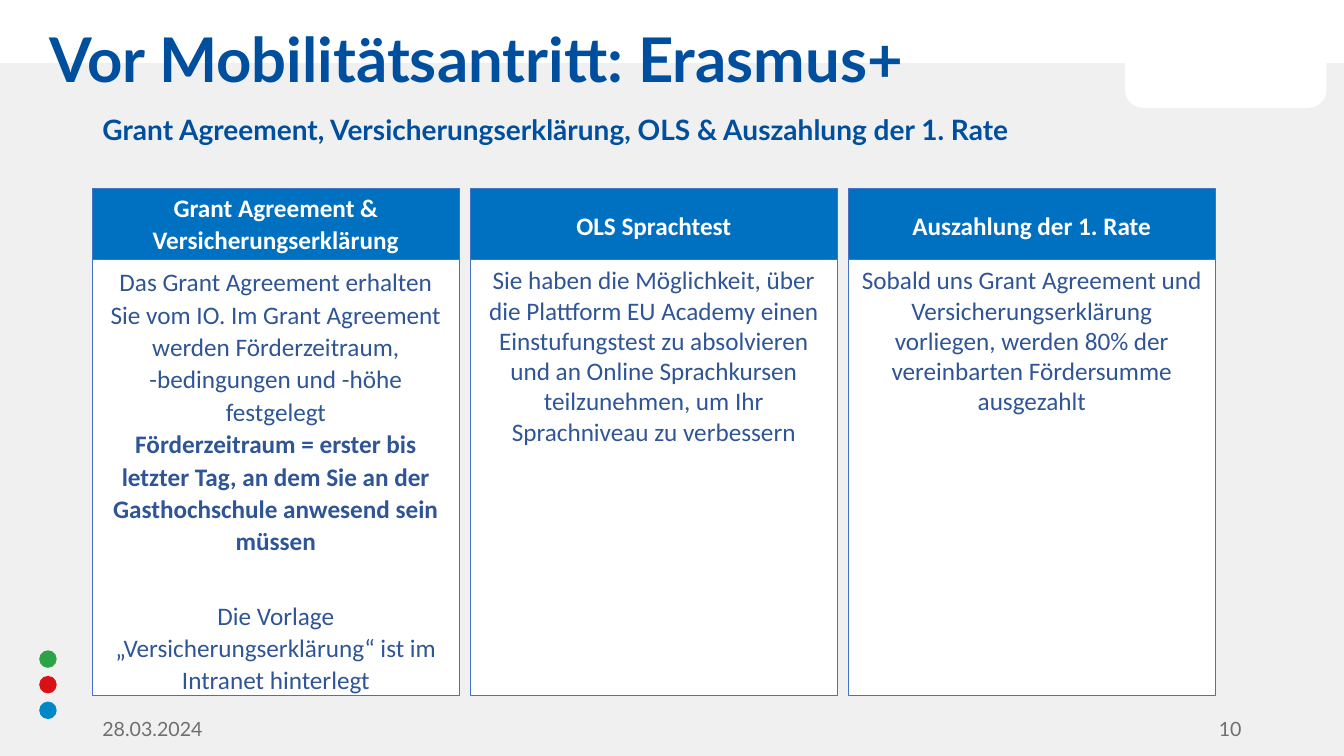
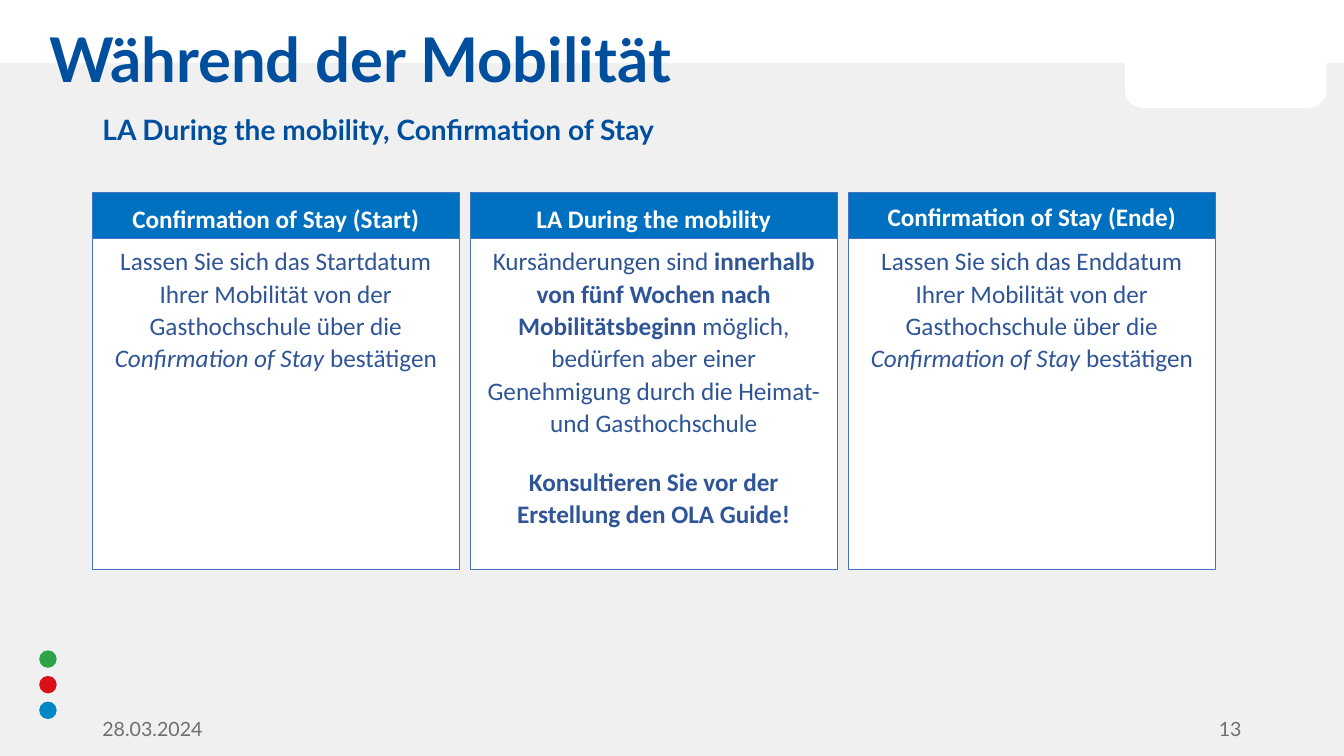
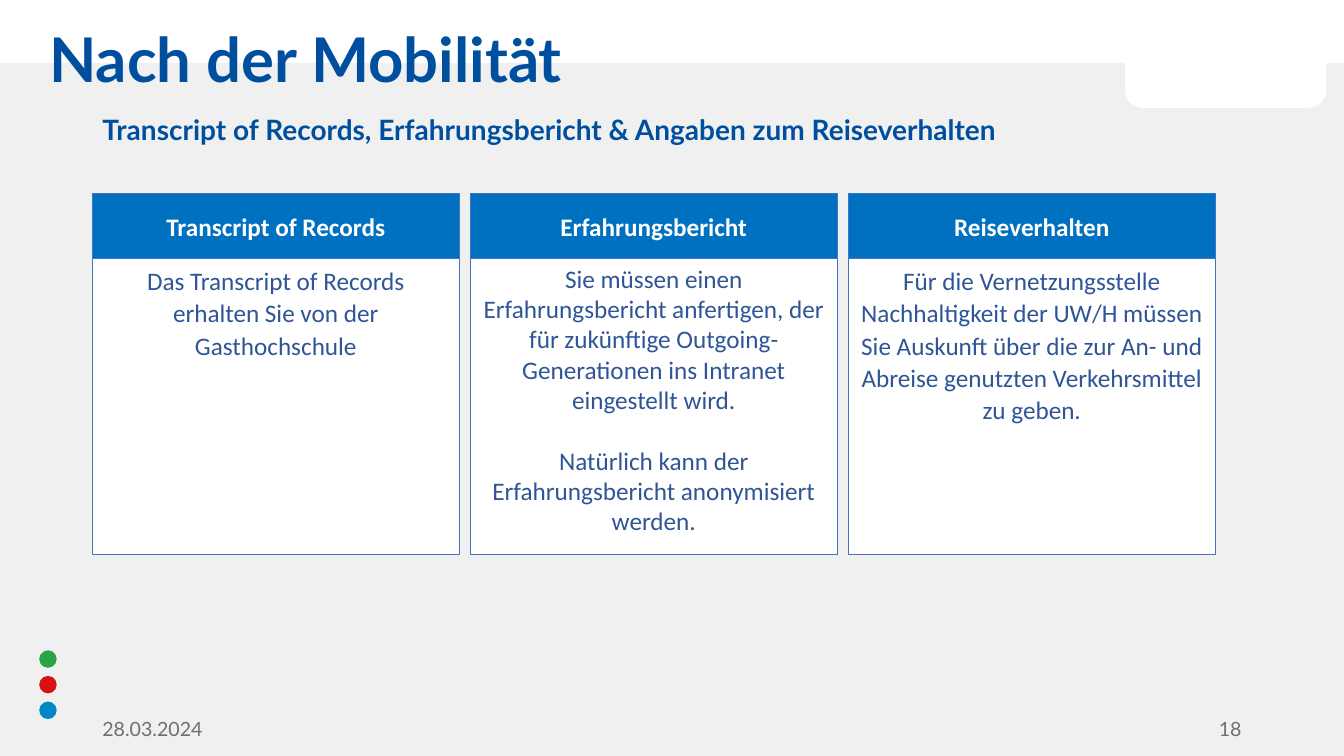
from dataclasses import dataclass

from lxml.etree import SubElement
from pptx import Presentation
from pptx.dml.color import RGBColor
from pptx.enum.shapes import MSO_SHAPE as Preset
from pptx.enum.text import MSO_ANCHOR as Anchor, MSO_AUTO_SIZE as AutoSize, PP_ALIGN as Align
from pptx.oxml.ns import qn
from pptx.util import Pt

NAVY, BLUE, OUTLINE, TEXT_BLUE = "004F9F", "0070C0", "4472C4", "2F5597"
WHITE, PALE_GREY, GREY = "FFFFFF", "F0F0F0", "6F6F6E"
DOTS = ("2BA346", "D91016", "0088C6")
TITLE_FONT, CARD_FONT = "Lato", "Calibri"
WIDTH, HEIGHT = 960, 540
TITLE_BOX = (28, 17.3, 775, 55.4)
SUBTITLE_BOX = (66, 80, 738, 28)
CARD_LEFT, CARD_PITCH, CARD_WIDTH = 66, 270, 262
DATE = "28.03.2024"
LOOSE = 1.07


@dataclass
class Card:
    header: str
    paragraphs: list
    anchor: Anchor = Anchor.MIDDLE
    spacing: float = LOOSE
    gap: float = 0


def color(hex_string):
    return RGBColor.from_string(hex_string)


def place(shape, box):
    shape.left, shape.top, shape.width, shape.height = map(Pt, box)


def style_font(font, name, size, hex_string, bold=False):
    font.name = name
    font.size = Pt(size)
    font.bold = bold
    font.color.rgb = color(hex_string)


def add_filled(slide, preset, box, fill, line=None):
    shape = slide.shapes.add_shape(preset, *map(Pt, box))
    shape.shadow.inherit = False
    shape.fill.solid()
    shape.fill.fore_color.rgb = color(fill)
    if line:
        shape.line.color.rgb = color(line)
        shape.line.width = Pt(0.5)
    else:
        shape.line.fill.background()
    return shape


def prepare_layout(layout, slide):
    for placeholder, box in zip(layout.placeholders, (TITLE_BOX, SUBTITLE_BOX)):
        place(placeholder, box)
    shapes = [add_filled(slide, Preset.RECTANGLE, (0, 45, WIDTH, HEIGHT - 45), PALE_GREY)]
    for index, dot in enumerate(DOTS):
        shapes.append(add_filled(slide, Preset.OVAL, (28, 464.5 + 18.3 * index, 12.5, 12.5), dot))
    tab = add_filled(slide, Preset.ROUND_2_SAME_RECTANGLE, (803.5, 0, 144, 77), WHITE)
    tab.rotation = 180
    shapes.append(tab)
    for index, shape in enumerate(shapes):
        layout.shapes.element.insert(2 + index, shape.element)


def fill_heading(placeholder, text, size):
    frame = placeholder.text_frame
    frame.text = text
    frame.auto_size = AutoSize.NONE
    frame.vertical_anchor = Anchor.MIDDLE
    paragraph = frame.paragraphs[0]
    properties = paragraph._p.get_or_add_pPr()
    properties.set("marL", "0")
    properties.set("indent", "0")
    SubElement(properties, qn("a:buNone"))
    paragraph.alignment = Align.LEFT
    paragraph.line_spacing = 0.9
    paragraph.space_before = Pt(0)
    style_font(paragraph.runs[0].font, TITLE_FONT, size, NAVY, True)


def add_footer(slide, left, text, alignment):
    frame = slide.shapes.add_textbox(Pt(left), Pt(509), Pt(216), Pt(22.5)).text_frame
    frame.word_wrap = True
    frame.vertical_anchor = Anchor.MIDDLE
    frame.text = text
    paragraph = frame.paragraphs[0]
    paragraph.alignment = alignment
    style_font(paragraph.runs[0].font, TITLE_FONT, 14, GREY)


def add_card(slide, box, header_height, card):
    left, top, width, height = box
    header = add_filled(slide, Preset.RECTANGLE, (left, top, width, header_height), BLUE, OUTLINE)
    header.text_frame.vertical_anchor = card.anchor
    header.text_frame.text = card.header
    title = header.text_frame.paragraphs[0]
    title.alignment = Align.CENTER
    title.line_spacing = LOOSE
    style_font(title.runs[0].font, CARD_FONT, 18, WHITE, True)

    body_box = (left, top + header_height, width, height - header_height)
    body = add_filled(slide, Preset.RECTANGLE, body_box, WHITE, OUTLINE)
    frame = body.text_frame
    frame.vertical_anchor = Anchor.TOP
    for index, parts in enumerate(card.paragraphs):
        paragraph = frame.add_paragraph() if index else frame.paragraphs[0]
        paragraph.alignment = Align.CENTER
        paragraph.line_spacing = card.spacing
        if index and index == len(card.paragraphs) - 1:
            paragraph.space_before = Pt(card.gap)
        for text, emphasis in parts:
            run = paragraph.add_run()
            run.text = text
            style_font(run.font, CARD_FONT, 18, TEXT_BLUE, emphasis == "bold")
            run.font.italic = emphasis == "italic"


def fill_slide(slide, title, subtitle, number, top, header_height, height, cards):
    fill_heading(slide.shapes.title, title, 44)
    fill_heading(slide.placeholders[1], subtitle, 20)
    add_footer(slide, 66, DATE, Align.LEFT)
    add_footer(slide, 678, number, Align.RIGHT)
    for index, card in enumerate(cards):
        box = (CARD_LEFT + CARD_PITCH * index, top, CARD_WIDTH, height)
        add_card(slide, box, header_height, card)


def plain(text):
    return [(text, "")]


def bold(text):
    return [(text, "bold")]


def confirmation(stage, day, anchor):
    return Card(
        f"Confirmation of Stay ({stage})",
        [[
            (f"Lassen Sie sich das {day} Ihrer Mobilität von der Gasthochschule über die ", ""),
            ("Confirmation of Stay ", "italic"),
            ("bestätigen", ""),
        ]],
        anchor,
    )


BEFORE = [
    Card(
        "Grant Agreement & Versicherungserklärung",
        [
            plain("Das Grant Agreement erhalten Sie vom IO. Im Grant Agreement werden "
                  "Förderzeitraum, -bedingungen und -höhe festgelegt"),
            bold("Förderzeitraum = erster bis letzter Tag, an dem Sie an der "
                 "Gasthochschule anwesend sein müssen"),
            plain("Die Vorlage „Versicherungserklärung“ ist im Intranet hinterlegt"),
        ],
        Anchor.BOTTOM,
        gap=30,
    ),
    Card(
        "OLS Sprachtest",
        [plain("Sie haben die Möglichkeit, über die Plattform EU Academy einen "
               "Einstufungstest zu absolvieren und an Online Sprachkursen "
               "teilzunehmen, um Ihr Sprachniveau zu verbessern")],
        spacing=1,
    ),
    Card(
        "Auszahlung der 1. Rate",
        [plain("Sobald uns Grant Agreement und Versicherungserklärung vorliegen, "
               "werden 80% der vereinbarten Fördersumme ausgezahlt")],
        spacing=1,
    ),
]

DURING = [
    confirmation("Start", "Startdatum", Anchor.BOTTOM),
    Card(
        "LA During the mobility",
        [
            [
                ("Kursänderungen sind ", ""),
                ("innerhalb von fünf Wochen nach Mobilitätsbeginn ", "bold"),
                ("möglich, bedürfen aber einer Genehmigung durch die Heimat- "
                 "und Gasthochschule", ""),
            ],
            bold("Konsultieren Sie vor der Erstellung den OLA Guide!"),
        ],
        Anchor.BOTTOM,
        gap=19,
    ),
    confirmation("Ende", "Enddatum", Anchor.MIDDLE),
]

AFTER = [
    Card(
        "Transcript of Records",
        [plain("Das Transcript of Records erhalten Sie von der Gasthochschule")],
    ),
    Card(
        "Erfahrungsbericht",
        [
            plain("Sie müssen einen Erfahrungsbericht anfertigen, der für zukünftige "
                  "Outgoing-Generationen ins Intranet eingestellt wird."),
            plain("Natürlich kann der Erfahrungsbericht anonymisiert werden."),
        ],
        spacing=1,
        gap=22,
    ),
    Card(
        "Reiseverhalten",
        [plain("Für die Vernetzungsstelle Nachhaltigkeit der UW/H müssen Sie Auskunft "
               "über die zur An- und Abreise genutzten Verkehrsmittel zu geben.")],
    ),
]

SLIDES = [
    ("Vor Mobilitätsantritt: Erasmus+",
     "Grant Agreement, Versicherungserklärung, OLS & Auszahlung der 1. Rate",
     "10", 134.5, 51, 362, BEFORE),
    ("Während der Mobilität",
     "LA During the mobility, Confirmation of Stay",
     "13", 137.5, 33, 269, DURING),
    ("Nach der Mobilität",
     "Transcript of Records, Erfahrungsbericht & Angaben zum Reiseverhalten",
     "18", 138, 46.5, 258, AFTER),
]


def main():
    presentation = Presentation()
    presentation.slide_width, presentation.slide_height = Pt(WIDTH), Pt(HEIGHT)
    layout = presentation.slide_layouts[1]
    slides = [presentation.slides.add_slide(layout) for _ in SLIDES]
    prepare_layout(layout, slides[0])
    for slide, content in zip(slides, SLIDES):
        fill_slide(slide, *content)
    presentation.save("out.pptx")


if __name__ == "__main__":
    main()
